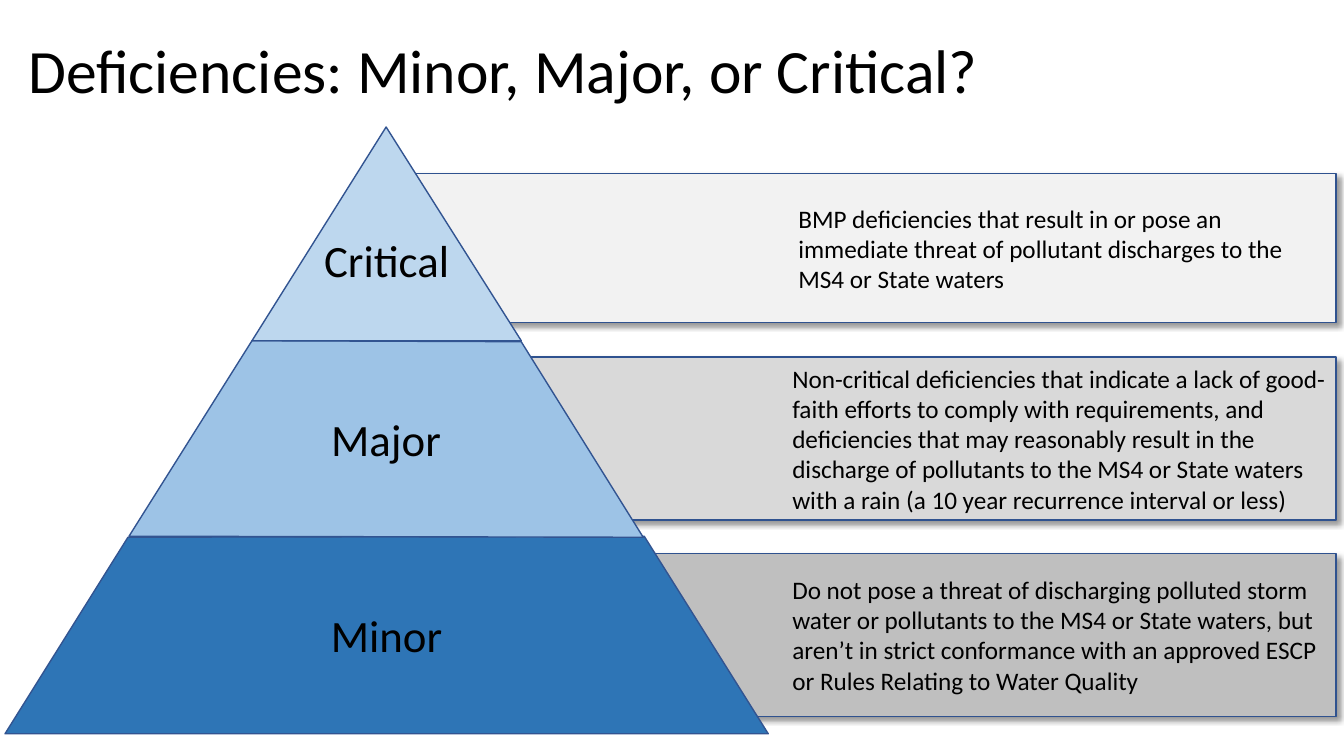
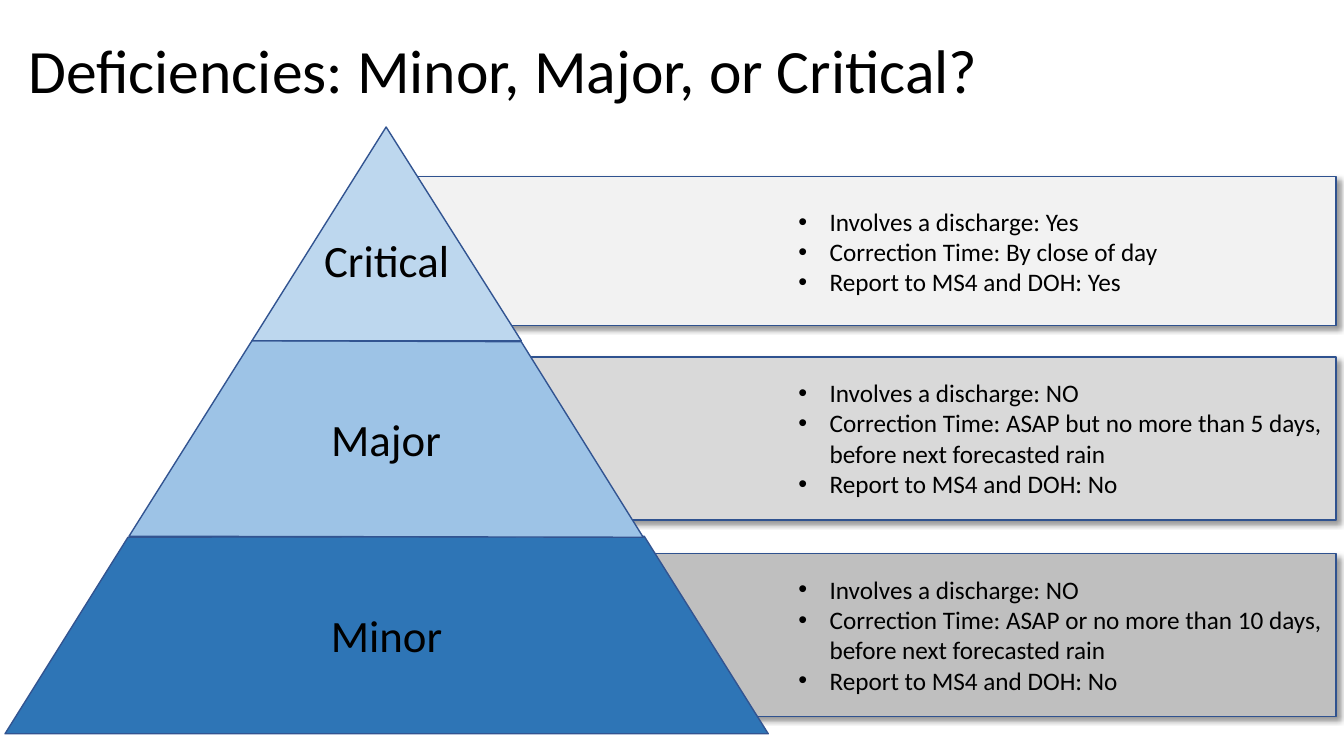
from dataclasses import dataclass

from lxml.etree import SubElement
from pptx import Presentation
from pptx.dml.color import RGBColor
from pptx.enum.shapes import MSO_SHAPE
from pptx.enum.text import MSO_ANCHOR, MSO_AUTO_SIZE, PP_ALIGN
from pptx.oxml.ns import qn
from pptx.shapes.autoshape import Shape
from pptx.slide import Slide
from pptx.text.text import _Paragraph as Paragraph
from pptx.util import Emu, Pt

EMU_PER_PX = 9144
FONT_NAME = "Calibri"
TITLE = "Deficiencies: Minor, Major, or Critical?"
BLACK = RGBColor(0x00, 0x00, 0x00)
BAR_LINE = RGBColor(0x2F, 0x52, 0x8F)
TIER_LINE = RGBColor(0x32, 0x54, 0x91)
LIGHT_GRAY = RGBColor(0xF2, 0xF2, 0xF2)
MIDDLE_GRAY = RGBColor(0xD9, 0xD9, 0xD9)
DARK_GRAY = RGBColor(0xBF, 0xBF, 0xBF)
PALE_BLUE = RGBColor(0xBD, 0xD7, 0xEE)
MIDDLE_BLUE = RGBColor(0x9D, 0xC3, 0xE6)
DEEP_BLUE = RGBColor(0x2E, 0x75, 0xB6)
BAR_RIGHT = 1325
NOTE_WIDTH = 550
NOTE_PADDING = 10
NOTE_LINE_HEIGHT = 30.3
BULLET_INDENT = 31


@dataclass(frozen=True)
class Tier:
    label: str
    fill: RGBColor
    outline: tuple[tuple[int, int], ...]
    bar_left: int
    bar_top: int
    bar_height: int
    bar_fill: RGBColor
    label_inset: int = 5


@dataclass(frozen=True)
class Note:
    texts: tuple[str, ...]
    lines: int
    left: int = 782
    bar_shift: int = 0
    bulleted: bool = False


TIERS = (
    Tier("Minor", DEEP_BLUE, ((127, 533), (639, 532), (762, 728), (5, 728)),
         410, 549, 162, DARK_GRAY),
    Tier("Major", MIDDLE_BLUE, ((128, 532), (250, 338), (517, 339), (638, 533)),
         410, 354, 162, MIDDLE_GRAY),
    Tier("Critical", PALE_BLUE, ((250, 338), (517, 338), (383, 126)),
         391, 172, 148, LIGHT_GRAY, label_inset=56),
)

DEFINITIONS = (
    Note(("Do not pose a threat of discharging polluted storm water or pollutants "
          "to the MS4 or State waters, but aren’t in strict conformance with an "
          "approved ESCP or Rules Relating to Water Quality",), 4, left=776),
    Note(("Non-critical deficiencies that indicate a lack of good-faith efforts to "
          "comply with requirements, and deficiencies that may reasonably result in "
          "the discharge of pollutants to the MS4 or State waters with a rain "
          "(a 10 year recurrence interval or less)",), 5, left=776),
    Note(("BMP deficiencies that result in or pose an immediate threat of pollutant "
          "discharges to the MS4 or State waters",), 3),
)

RESPONSES = (
    Note(("Involves a discharge: NO",
          "Correction Time: ASAP or no more than 10 days, before next forecasted rain",
          "Report to MS4 and DOH: No"), 4, bulleted=True),
    Note(("Involves a discharge: NO",
          "Correction Time: ASAP but no more than 5 days, before next forecasted rain",
          "Report to MS4 and DOH: No"), 4, bulleted=True),
    Note(("Involves a discharge: Yes",
          "Correction Time: By close of day",
          "Report to MS4 and DOH: Yes"), 3, bar_shift=3, bulleted=True),
)


def px(length: float) -> Emu:
    return Emu(round(length) * EMU_PER_PX)


def add_text(paragraph: Paragraph, text: str, size: int) -> None:
    run = paragraph.add_run()
    run.text = text
    run.font.name = FONT_NAME
    run.font.size = Pt(size)
    run.font.color.rgb = BLACK


def add_bullet(paragraph: Paragraph) -> None:
    properties = paragraph._p.get_or_add_pPr()
    properties.set("marL", str(px(BULLET_INDENT)))
    properties.set("indent", str(px(-BULLET_INDENT)))
    SubElement(properties, qn("a:buFont"), typeface="Arial")
    SubElement(properties, qn("a:buChar"), char="•")


def style_shape(shape: Shape, fill: RGBColor, line: RGBColor) -> None:
    shape.shadow.inherit = False
    shape.fill.solid()
    shape.fill.fore_color.rgb = fill
    shape.line.color.rgb = line
    shape.line.width = Pt(1)


def add_shadow(shape: Shape) -> None:
    effects = shape._element.spPr.find(qn("a:effectLst"))
    shadow = SubElement(effects, qn("a:outerShdw"), blurRad=str(Pt(4)),
                        dist=str(Pt(3)), dir="2700000", algn="tl", rotWithShape="0")
    color = SubElement(shadow, qn("a:srgbClr"), val=str(BLACK))
    SubElement(color, qn("a:alpha"), val="40000")


def add_title(slide: Slide) -> None:
    title = slide.shapes.title
    title.left, title.top, title.width, title.height = (
        px(18), px(0), px(1189), px(145))
    frame = title.text_frame
    frame.auto_size = MSO_AUTO_SIZE.NONE
    frame.word_wrap = True
    frame.vertical_anchor = MSO_ANCHOR.MIDDLE
    paragraph = frame.paragraphs[0]
    paragraph.alignment = PP_ALIGN.LEFT
    paragraph.line_spacing = 0.9
    add_text(paragraph, TITLE, 44)


def add_bar(slide: Slide, tier: Tier, note: Note) -> None:
    bar = slide.shapes.add_shape(
        MSO_SHAPE.RECTANGLE, px(tier.bar_left), px(tier.bar_top + note.bar_shift),
        px(BAR_RIGHT - tier.bar_left), px(tier.bar_height))
    style_shape(bar, tier.bar_fill, BAR_LINE)
    add_shadow(bar)


def add_tier(slide: Slide, tier: Tier) -> None:
    start, *points = tier.outline
    builder = slide.shapes.build_freeform(*start, scale=EMU_PER_PX)
    builder.add_line_segments(points, close=True)
    shape = builder.convert_to_shape()
    style_shape(shape, tier.fill, TIER_LINE)
    frame = shape.text_frame
    frame.word_wrap = True
    frame.vertical_anchor = MSO_ANCHOR.MIDDLE
    frame.margin_top = px(tier.label_inset)
    paragraph = frame.paragraphs[0]
    paragraph.alignment = PP_ALIGN.CENTER
    add_text(paragraph, tier.label, 32)


def add_note(slide: Slide, tier: Tier, note: Note) -> None:
    height = NOTE_PADDING + NOTE_LINE_HEIGHT * note.lines
    top = tier.bar_top + note.bar_shift + (tier.bar_height - height) / 2
    box = slide.shapes.add_textbox(px(note.left), px(top), px(NOTE_WIDTH), px(height))
    frame = box.text_frame
    frame.word_wrap = True
    frame.auto_size = MSO_AUTO_SIZE.SHAPE_TO_FIT_TEXT
    frame.vertical_anchor = MSO_ANCHOR.MIDDLE
    for index, text in enumerate(note.texts):
        paragraph = frame.add_paragraph() if index else frame.paragraphs[0]
        if note.bulleted:
            add_bullet(paragraph)
        add_text(paragraph, text, 18)


def add_pyramid_slide(presentation: Presentation, notes: tuple[Note, ...]) -> None:
    slide = presentation.slides.add_slide(presentation.slide_layouts[5])
    add_title(slide)
    for tier, note in zip(TIERS, notes):
        add_bar(slide, tier, note)
    for tier in TIERS:
        add_tier(slide, tier)
    for tier, note in zip(TIERS, notes):
        add_note(slide, tier, note)


def main() -> None:
    presentation = Presentation()
    presentation.slide_width = px(1333)
    presentation.slide_height = px(750)
    for notes in (DEFINITIONS, RESPONSES):
        add_pyramid_slide(presentation, notes)
    presentation.save("out.pptx")


if __name__ == "__main__":
    main()
